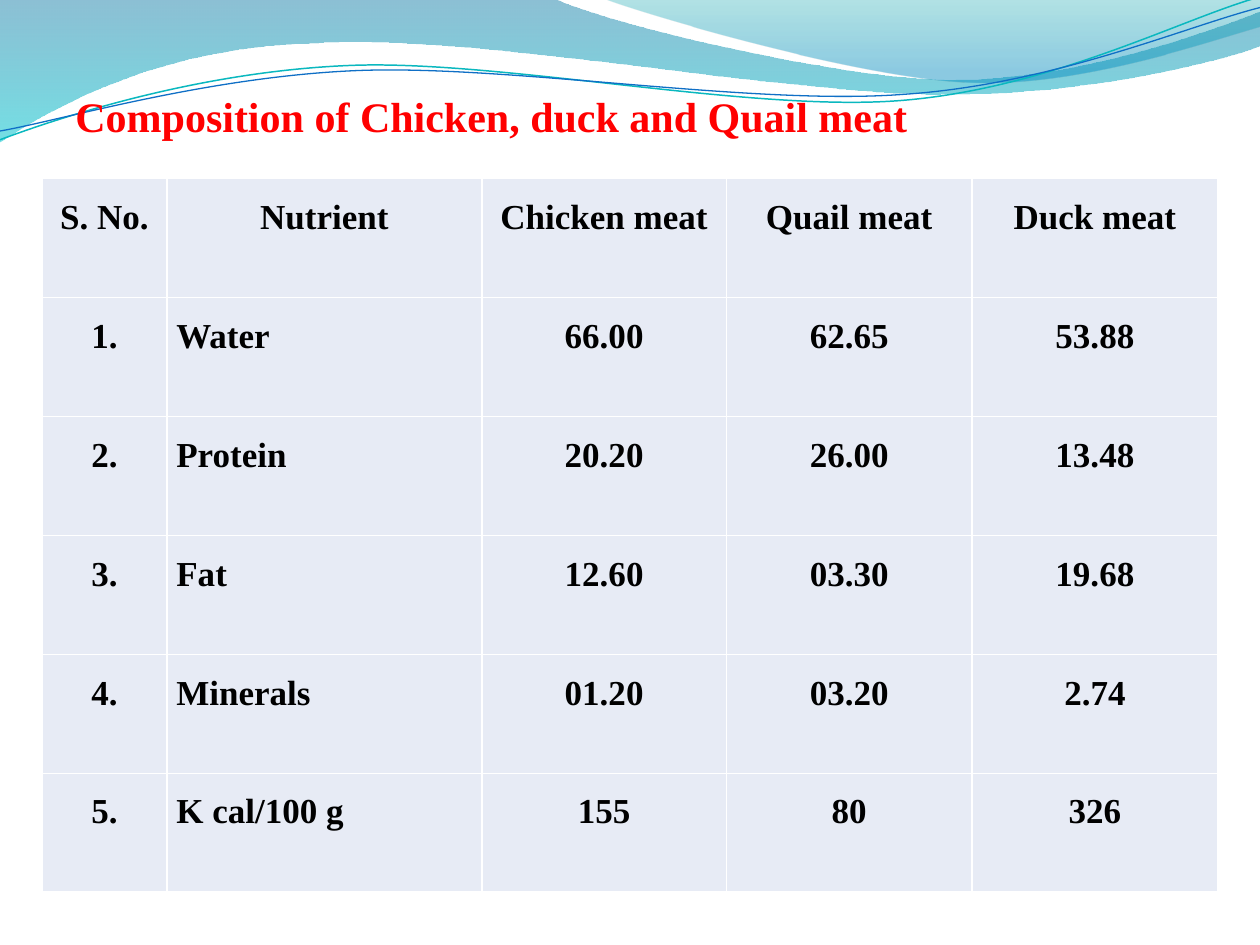
from lxml.etree import SubElement
from pptx import Presentation
from pptx.dml.color import RGBColor
from pptx.enum.text import PP_ALIGN as Align
from pptx.oxml.ns import qn
from pptx.util import Pt

FONT = "Times New Roman"
RED = RGBColor(0xFF, 0x00, 0x00)
BLACK = RGBColor(0x00, 0x00, 0x00)
CELL_FILL = RGBColor(0xE7, 0xEB, 0xF5)
DEEP_BLUE = RGBColor(0x00, 0x74, 0xA1)
CYAN = RGBColor(0x00, 0xC6, 0xCF)
TEAL = RGBColor(0x00, 0xA1, 0xA9)
SKY_BLUE = RGBColor(0x00, 0x8B, 0xBF)
LINE_TEAL = RGBColor(0x0A, 0xB8, 0xBF)
LINE_BLUE = RGBColor(0x0F, 0x6F, 0xC6)
BORDER = RGBColor(0xFF, 0xFF, 0xFF)


def draw_wave(shapes, start, segments, close):
    """Draw an outline; two numbers are a line end, six a cubic Bézier curve."""
    # The builder keeps whole numbers only, so it works in tenths of a point.
    builder = shapes.build_freeform(start[0] * 10, start[1] * 10, scale=Pt(0.1))
    builder.add_line_segments(
        [(segment[i] * 10, segment[i + 1] * 10)
         for segment in segments for i in range(0, len(segment), 2)], close=close)
    wave = builder.convert_to_shape()
    wave.shadow.inherit = False
    nodes = iter(list(wave._element.iter(qn("a:lnTo"))))
    for segment in segments:
        node = next(nodes)
        if len(segment) == 6:
            node.tag = qn("a:cubicBezTo")
            for extra in (next(nodes), next(nodes)):
                node.append(extra[0])
                extra.getparent().remove(extra)
    return wave


def write_text(frame, text, size, color, align, line_spacing=None, space_before=None):
    para = frame.paragraphs[0]
    para.alignment = align
    para.line_spacing = line_spacing
    para.space_before = space_before
    span = para.add_run()
    span.text = text
    span.font.name = FONT
    span.font.size = Pt(size)
    span.font.bold = True
    span.font.color.rgb = color


deck = Presentation()
deck.slide_width, deck.slide_height = Pt(720), Pt(540)
page = deck.slides.add_slide(deck.slide_layouts[6])

# Translucent bands: start, segments, gradient stops (position, colour, opacity in %)
bands = [
    ((0, 0),
     [(316.8, -0.7),
      (342.7, 12.2, 478.1, 45.4, 545.8, 45.4),
      (614.2, 45.4, 689.8, 18.7, 720, 6.5),
      (720.7, 25.9),
      (707.8, 31.7, 626.4, 54.7, 537.1, 54),
      (447.8, 54, 275, 20.2, 185, 24.5),
      (92.9, 25.9, 33.1, 59.8, -0.7, 81.4)],
     [(0, DEEP_BLUE, 45), (1, CYAN, 55)]),
    ((344.9, -0.7),
     [(366.5, 7.9, 491, 44.6, 553.7, 46.8),
      (616.3, 49.7, 691.9, 23, 720, 15.1),
      (720, 0)],
     [(0, TEAL, 30), (0.8, SKY_BLUE, 45)]),
]
for start, segments, stops in bands:
    band = draw_wave(page.shapes, start, segments, close=True)
    band.line.fill.background()
    band.fill.gradient()
    band.fill.gradient_angle = 270
    for stop, (position, color, opacity) in zip(band.fill.gradient_stops, stops):
        stop.position = position
        stop.color.rgb = color
    stop_colors = band._element.spPr.iter(qn("a:srgbClr"))
    for stop_color, (position, color, opacity) in zip(stop_colors, stops):
        SubElement(stop_color, qn("a:alpha"), val=str(opacity * 1000))

wave_lines = [
    ((-1.4, 62.9),
     [(33.7, 51.6, 114, 29.4, 199.8, 29.9),
      (284.8, 30.3, 425.8, 67.2, 512.4, 64.8),
      (599, 62.4, 676.4, 25.7, 720.2, 15.6)],
     LINE_TEAL, 0.85),
    ((-1.1, 57.9),
     [(32.9, 53.7, 118.3, 32.5, 204, 33),
      (290.5, 33.5, 428.9, 63.8, 515.5, 61.3),
      (601.4, 59.7, 678.5, 30.1, 721.4, 21.3)],
     LINE_BLUE, 0.75),
]
for start, segments, color, width in wave_lines:
    wave_line = draw_wave(page.shapes, start, segments, close=False)
    wave_line.rotation = -2.7
    wave_line.fill.background()
    wave_line.line.color.rgb = color
    wave_line.line.width = Pt(width)

title_box = page.shapes.add_textbox(Pt(36), Pt(48), Pt(648), Pt(468))
title_box.text_frame.word_wrap = True
write_text(title_box.text_frame, "Composition of Chicken, duck and Quail meat",
           size=24, color=RED, align=Align.JUSTIFY, space_before=Pt(3))

nutrient_rows = [
    ("S. No.", "Nutrient", "Chicken meat", "Quail meat", "Duck meat"),
    ("1.", "Water", "66.00", "62.65", "53.88"),
    ("2.", "Protein", "20.20", "26.00", "13.48"),
    ("3.", "Fat", "12.60", "03.30", "19.68"),
    ("4.", "Minerals", "01.20", "03.20", "2.74"),
    ("5.", "K cal/100 g", "155", "80", "326"),
]
column_widths = [71.4, 180, 139.7, 140.4, 140.4]
row_height = 68
table = page.shapes.add_table(
    len(nutrient_rows), len(column_widths), Pt(24), Pt(102),
    Pt(sum(column_widths)), Pt(row_height * len(nutrient_rows))).table
table.first_row = table.horz_banding = False
for column, width in zip(table.columns, column_widths):
    column.width = Pt(width)

for row_index, row_texts in enumerate(nutrient_rows):
    table.rows[row_index].height = Pt(row_height)
    for column_index, text in enumerate(row_texts):
        cell = table.cell(row_index, column_index)
        cell.margin_left = cell.margin_right = Pt(5.4)
        cell.margin_top = cell.margin_bottom = Pt(0)
        for side in ("a:lnL", "a:lnR", "a:lnT", "a:lnB"):
            border = SubElement(cell._tc.get_or_add_tcPr(), qn(side), w=str(Pt(1)))
            border_fill = SubElement(border, qn("a:solidFill"))
            SubElement(border_fill, qn("a:srgbClr"), val=str(BORDER))
        cell.fill.solid()
        cell.fill.fore_color.rgb = CELL_FILL
        is_nutrient_name = row_index > 0 and column_index == 1
        write_text(cell.text_frame, text, size=20, color=BLACK, line_spacing=1.5,
                   align=Align.JUSTIFY if is_nutrient_name else Align.CENTER)

deck.save("out.pptx")
